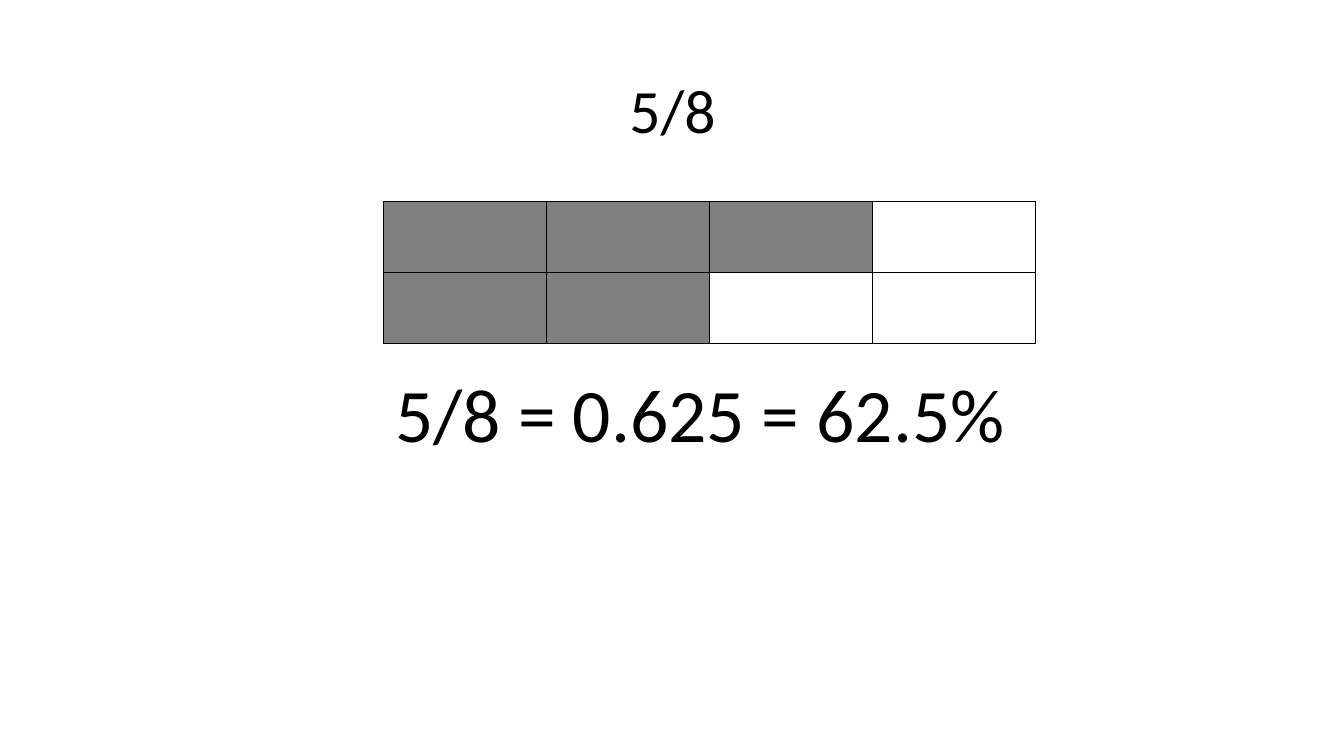
from lxml import etree
from pptx import Presentation
from pptx.dml.color import RGBColor
from pptx.enum.text import MSO_ANCHOR, PP_ALIGN
from pptx.oxml.ns import qn
from pptx.util import Inches, Pt

# Content
TITLE = "5/8"
EQUATION = "5/8 = 0.625 = 62.5%"
SHADED_PER_ROW = [3, 2]
COLUMNS = 4

BLACK = RGBColor(0x00, 0x00, 0x00)
GRAY = RGBColor(0x80, 0x80, 0x80)
WHITE = RGBColor(0xFF, 0xFF, 0xFF)


def write_text(shape, text, size):
    shape.text_frame.text = text
    paragraph = shape.text_frame.paragraphs[0]
    paragraph.alignment = PP_ALIGN.CENTER
    paragraph.font.name = "Calibri"
    paragraph.font.size = Pt(size)
    paragraph.font.color.rgb = BLACK
    return paragraph


def add_borders(cell):
    properties = cell._tc.get_or_add_tcPr()
    for position, side in enumerate(("lnL", "lnR", "lnT", "lnB")):
        line = etree.Element(qn(f"a:{side}"), w=str(Pt(1)))
        fill = etree.SubElement(line, qn("a:solidFill"))
        etree.SubElement(fill, qn("a:srgbClr"), val=str(BLACK))
        properties.insert(position, line)


presentation = Presentation()
presentation.slide_width = Inches(13.33)
presentation.slide_height = Inches(7.5)
slide = presentation.slides.add_slide(presentation.slide_layouts[5])

# Title
title = slide.shapes.title
title.left, title.top = Inches(0.92), Inches(0.4)
title.width, title.height = Inches(11.5), Inches(1.45)
title.text_frame.vertical_anchor = MSO_ANCHOR.MIDDLE
write_text(title, TITLE, 44).line_spacing = 0.9

# Fraction grid
table = slide.shapes.add_table(
    len(SHADED_PER_ROW), COLUMNS,
    Inches(3.8), Inches(2), Inches(6.47), Inches(1.41)).table
table.first_row = False
table.horz_banding = False
for row, shaded in enumerate(SHADED_PER_ROW):
    for column in range(COLUMNS):
        cell = table.cell(row, column)
        cell.fill.solid()
        cell.fill.fore_color.rgb = GRAY if column < shaded else WHITE
        add_borders(cell)

# Equation
equation = slide.shapes.add_textbox(
    Inches(2.77), Inches(3.59), Inches(8.35), Inches(1.01))
equation.text_frame.word_wrap = True
write_text(equation, EQUATION, 54)

presentation.save("out.pptx")
